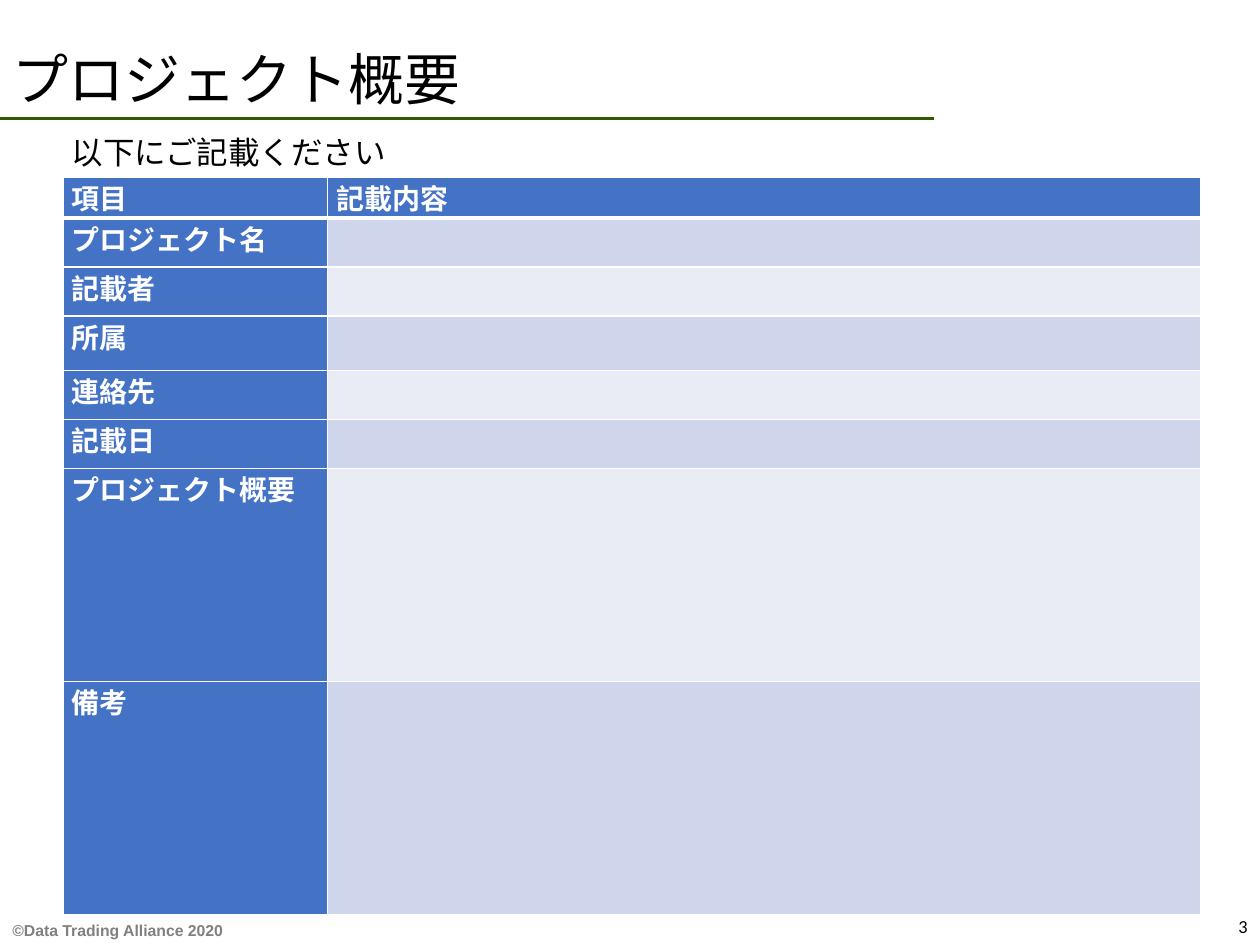
from lxml.etree import SubElement
from pptx import Presentation
from pptx.dml.color import RGBColor
from pptx.enum.shapes import MSO_CONNECTOR
from pptx.enum.text import MSO_ANCHOR, MSO_AUTO_SIZE, PP_ALIGN
from pptx.oxml import parse_xml
from pptx.oxml.ns import nsdecls, qn
from pptx.util import Inches, Pt

COLS, ROWS = 100, 75
JP = "Noto Sans CJK JP"
BLUE, WHITE, BLACK = "4472C4", "FFFFFF", "000000"
BANDS = ("CFD5EA", "E9EBF5")
ITEMS = [
    ("プロジェクト名", 3.9),
    ("記載者", 3.9),
    ("所属", 4.3),
    ("連絡先", 3.9),
    ("記載日", 3.9),
    ("プロジェクト概要", 16.9),
    ("備考", 18.5),
]


def rgb(value):
    """Turn a hex string into a colour."""
    return RGBColor.from_string(value)


class Page:
    """Hold the style and the current slide, measured on a 100 by 75 grid."""

    def __init__(self, prs):
        """Add a title-only slide."""
        self.dx, self.dy = prs.slide_width / COLS, prs.slide_height / ROWS
        self.s = prs.slides.add_slide(prs.slide_layouts[5])
        self.s.background.fill.solid()
        self.s.background.fill.fore_color.rgb = rgb(WHITE)

    def box(self, x, y, w, h):
        """Convert grid units to slide lengths."""
        return (round(x * self.dx), round(y * self.dy),
                round(w * self.dx), round(h * self.dy))

    def add_run(self, tf, text, size, color=BLACK, font=JP, bold=False,
                align=PP_ALIGN.LEFT):
        """Add one formatted run and return its paragraph."""
        p = tf.paragraphs[0]
        p.alignment = align
        r = p.add_run()
        r.text = text
        r.font.size, r.font.bold, r.font.name = Pt(size), bold, font
        r.font.color.rgb = rgb(color)
        SubElement(r.font._element, qn("a:ea"), typeface=JP)
        return p

    def title(self, text, *place):
        """Place and format the title."""
        sp = self.s.shapes.title
        sp.left, sp.top, sp.width, sp.height = self.box(*place)
        tf = sp.text_frame
        tf.auto_size = MSO_AUTO_SIZE.NONE
        tf.vertical_anchor = MSO_ANCHOR.MIDDLE
        self.add_run(tf, text, 32).line_spacing = 0.9

    def text(self, text, *place, anchor=MSO_ANCHOR.TOP, wrap=False, **style):
        """Add a text box."""
        tf = self.s.shapes.add_textbox(*self.box(*place)).text_frame
        tf.word_wrap, tf.vertical_anchor = wrap, anchor
        self.add_run(tf, text, **style)

    def rule(self, x, y, w, color, width):
        """Add a horizontal line."""
        left, top, length, _ = self.box(x, y, w, 0)
        sp = self.s.shapes.add_connector(
            MSO_CONNECTOR.STRAIGHT, left, top, left + length, top)
        sp.line.color.rgb, sp.line.width = rgb(color), Pt(width)
        SubElement(sp._element.spPr, qn("a:effectLst"))

    def cell(self, cell, text, fill, top, bottom):
        """Fill a table cell and draw its borders."""
        cell.margin_left = cell.margin_right = Inches(0.07)
        cell.margin_top = cell.margin_bottom = 0
        cell.fill.solid()
        cell.fill.fore_color.rgb = rgb(fill)
        widths = {"L": 1, "R": 1, "T": top, "B": bottom}
        for i, (side, width) in enumerate(widths.items()):
            cell._tc.get_or_add_tcPr().insert(i, parse_xml(
                f'<a:ln{side} {nsdecls("a")} w="{Pt(width)}"><a:solidFill>'
                f'<a:srgbClr val="{WHITE}"/></a:solidFill></a:ln{side}>'))
        if text:
            self.add_run(cell.text_frame, text, 16, WHITE, bold=True,
                         align=PP_ALIGN.JUSTIFY)

    def table(self, x, y, widths, header, header_height, items):
        """Add a form with a header row and banded blank entries."""
        heights = [header_height] + [h for _, h in items]
        table = self.s.shapes.add_table(
            len(heights), len(widths),
            *self.box(x, y, sum(widths), sum(heights))).table
        for column, width in zip(table.columns, widths):
            column.width = round(width * self.dx)
        for row, height in zip(table.rows, heights):
            row.height = round(height * self.dy)
        for c, text in enumerate(header):
            self.cell(table.cell(0, c), text, BLUE, 1, 3)
        for i, (label, _) in enumerate(items):
            top = 1 if i else 3
            self.cell(table.cell(i + 1, 0), label, BLUE, top, 1)
            self.cell(table.cell(i + 1, 1), "", BANDS[i % 2], top, 1)


def main():
    """Build the project summary form."""
    prs = Presentation()
    prs.slide_width, prs.slide_height = Inches(10), Inches(7.5)
    page = Page(prs)
    page.text("©Data Trading Alliance 2020", 0, 72.6, 19.7, 2.5,
              anchor=MSO_ANCHOR.BOTTOM, size=9, color="808080",
              font="Arial", bold=True)
    page.rule(0, 9.4, 74.1, "2C5C02", 1.5)
    page.title("プロジェクト概要", 0, 3.3, 86.2, 6.5)
    page.text("3", 77.5, 70.9, 22.5, 4, anchor=MSO_ANCHOR.BOTTOM, wrap=True,
              size=10.5, font="Calibri", align=PP_ALIGN.RIGHT)
    page.table(5, 14.1, (21, 69.3), ("項目", "記載内容"), 3.2, ITEMS)
    page.text("以下にご記載ください", 4.7, 10.1, 27.3, 4, size=18,
              font="Calibri")
    prs.save("out.pptx")


if __name__ == "__main__":
    main()
